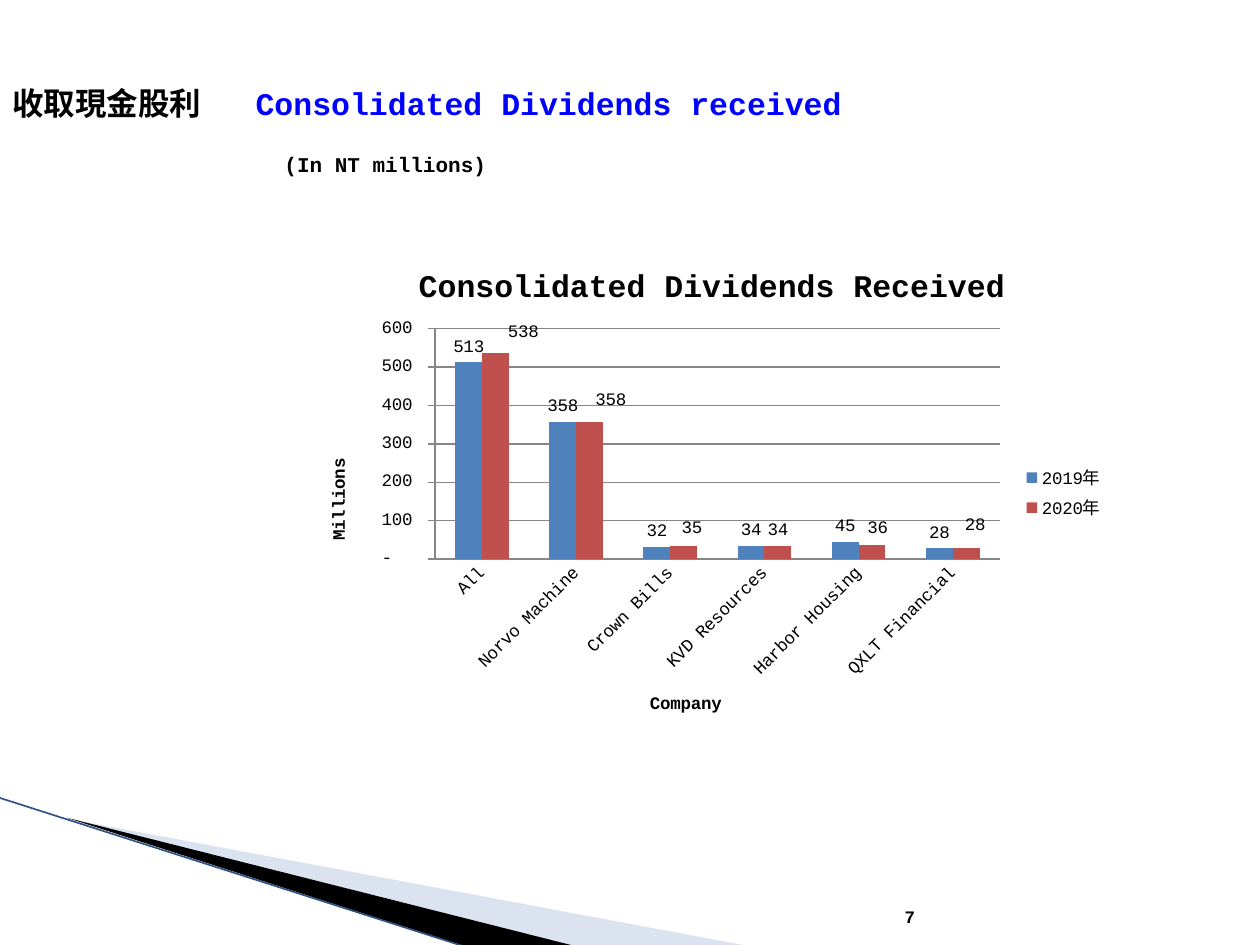
from lxml import etree
from pptx import Presentation
from pptx import util as u
from pptx.chart import data as chart_data
from pptx.dml import color
from pptx.enum import chart as chart_enum, shapes, text
from pptx.oxml import ns

FONT = "Courier New"
NUMBER_FORMAT = '_-* #,##0_-;\\-* #,##0_-;_-* "-"??_-;_-@_'
COMPANIES = ["All", "Norvo Machine", "Crown Bills", "KVD Resources",
             "Harbor Housing", "QXLT Financial"]
DIVIDENDS = {
    "2019年": ("4F81BD", [513, 358, 32, 34, 45, 28]),
    "2020年": ("C0504D", [538, 358, 35, 34, 36, 28]),
}
LABEL_SHIFTS = {0: (0.034, -0.01), 1: (0.026, -0.012), 2: (0.01, -0.004),
                4: (0.007, -0.004), 5: (0.011, -0.016)}


def rgb(value):
    """Turn a hex string into a colour."""
    return color.RGBColor.from_string(value)


def style_font(font, size, bold=False, hex_color="000000"):
    """Set the face, size, weight and colour of a font."""
    font.name = FONT
    font.size = u.Pt(size)
    font.bold = bold
    font.color.rgb = rgb(hex_color)


def add_text(slide, box, content, size, hex_color="000000", wrap=True,
             align=text.PP_ALIGN.LEFT, anchor=text.MSO_ANCHOR.MIDDLE):
    """Add a bold one-paragraph text box."""
    frame = slide.shapes.add_textbox(*map(u.Inches, box)).text_frame
    frame.word_wrap = wrap
    frame.vertical_anchor = anchor
    paragraph = frame.paragraphs[0]
    paragraph.text = content
    paragraph.alignment = align
    style_font(paragraph.font, size, True, hex_color)


def add_wedge(slide, points, hex_color, opacity=100):
    """Add a closed filled outline through points in inches."""
    start, *others = [(u.Inches(x), u.Inches(y)) for x, y in points]
    builder = slide.shapes.build_freeform(*start)
    builder.add_line_segments(others, close=True)
    shape = builder.convert_to_shape()
    shape.shadow.inherit = False
    shape.line.fill.background()
    shape.fill.solid()
    shape.fill.fore_color.rgb = rgb(hex_color)
    if opacity < 100:
        srgb = shape._element.spPr.find(".//" + ns.qn("a:srgbClr"))
        etree.SubElement(srgb, ns.qn("a:alpha"), val=str(opacity * 1000))


def add_line(slide, start, end, hex_color, width):
    """Add a straight line without a shadow."""
    line = slide.shapes.add_connector(
        shapes.MSO_CONNECTOR.STRAIGHT, *map(u.Inches, start + end))
    line.line.color.rgb = rgb(hex_color)
    line.line.width = u.Pt(width)
    etree.SubElement(line._element.spPr, ns.qn("a:effectLst"))


def place(element, index, **settings):
    """Give a chart element a manual layout, inserted at a child index."""
    for old in element.findall(ns.qn("c:layout")):
        element.remove(old)
    layout = etree.Element(ns.qn("c:layout"))
    manual = etree.SubElement(layout, ns.qn("c:manualLayout"))
    for name, value in settings.items():
        etree.SubElement(manual, ns.qn("c:" + name), val=str(value))
    element.insert(index, layout)


def style_title(title, content, size, x, y):
    """Write and place a bold chart or axis title."""
    run = title.text_frame.paragraphs[0].add_run()
    run.text = content
    style_font(run.font, size, True)
    place(title._element, 1, xMode="edge", yMode="edge", x=x, y=y)


def style_axis(axis, title, x, y):
    """Style an axis and its title."""
    style_font(axis.tick_labels.font, 10)
    axis.format.line.color.rgb = rgb("868686")
    axis.minor_tick_mark = chart_enum.XL_TICK_MARK.NONE
    style_title(axis.axis_title, title, 10, x, y)


def style_labels(labels):
    """Show values above the columns without leader lines."""
    labels.show_value = True
    labels.number_format = NUMBER_FORMAT
    labels.number_format_is_linked = False
    labels.position = chart_enum.XL_LABEL_POSITION.OUTSIDE_END
    style_font(labels.font, 10)
    tag = ns.qn("c:showLeaderLines")
    leader = labels._element.find(tag)
    if leader is None:
        leader = etree.SubElement(labels._element, tag)
    leader.set("val", "0")


def shift_labels(series, shifts):
    """Move single value labels by fractions of the chart size."""
    for index in shifts:
        label = series.points[index].data_label
        style_font(label.font, 10)
        label.position = chart_enum.XL_LABEL_POSITION.OUTSIDE_END
    for element in series._element.iter(ns.qn("c:dLbl")):
        index = int(element.find(ns.qn("c:idx")).get("val"))
        x, y = shifts[index]
        place(element, 1, x=x, y=y)
        number_format = etree.Element(
            ns.qn("c:numFmt"), formatCode=NUMBER_FORMAT, sourceLinked="0")
        element.insert(2, number_format)


def add_dividend_chart(slide, box):
    """Add the clustered column chart of dividends by company."""
    data = chart_data.CategoryChartData(number_format=NUMBER_FORMAT)
    data.categories = COMPANIES
    for name, (_, values) in DIVIDENDS.items():
        data.add_series(name, values)
    chart = slide.shapes.add_chart(
        chart_enum.XL_CHART_TYPE.COLUMN_CLUSTERED, *map(u.Inches, box), data).chart
    style_font(chart.font, 10)
    chart.has_title = True
    style_title(chart.chart_title, "Consolidated Dividends Received", 18, 0.136, 0.034)
    chart.chart_title.include_in_layout = False
    chart.has_legend = True
    chart.legend.position = chart_enum.XL_LEGEND_POSITION.RIGHT
    chart.legend.include_in_layout = False
    style_font(chart.legend.font, 10)

    style_axis(chart.category_axis, "Company", 0.423, 0.897)
    chart.category_axis.major_tick_mark = chart_enum.XL_TICK_MARK.NONE
    body = chart.category_axis._element.find(
        ns.qn("c:txPr") + "/" + ns.qn("a:bodyPr"))
    body.set("rot", "-2700000")
    body.set("vert", "horz")
    value_axis = chart.value_axis
    style_axis(value_axis, "Millions", 0.028, 0.425)
    value_axis.major_tick_mark = chart_enum.XL_TICK_MARK.CROSS
    value_axis.minimum_scale, value_axis.maximum_scale = 0, 600
    value_axis.major_unit = 100
    value_axis.tick_labels.number_format = NUMBER_FORMAT
    value_axis.tick_labels.number_format_is_linked = False
    value_axis.major_gridlines.format.line.color.rgb = rgb("868686")

    plot = chart.plots[0]
    plot.vary_by_categories = False
    plot.gap_width = 150
    plot.overlap = 0
    for series, (hex_color, _) in zip(plot.series, DIVIDENDS.values()):
        series.format.fill.solid()
        series.format.fill.fore_color.rgb = rgb(hex_color)
        style_labels(series.data_labels)
    shift_labels(plot.series[1], LABEL_SHIFTS)
    plot_area = chart._chartSpace.find(".//" + ns.qn("c:plotArea"))
    place(plot_area, 0, layoutTarget="inner", xMode="edge", yMode="edge",
          x=0.163, y=0.17, w=0.694, h=0.464)


def main():
    """Build and save the slide."""
    presentation = Presentation()
    presentation.slide_width = u.Inches(10)
    presentation.slide_height = u.Inches(7.5)
    slide = presentation.slides.add_slide(presentation.slide_layouts[6])
    add_wedge(slide, [(0.55, 6.5), (5.95, 7.51), (4.56, 7.51)], "A7B9DB", 40)
    add_wedge(slide, [(0.53, 6.49), (4.57, 7.51), (3.72, 7.52)], "000000")
    add_line(slide, (-0.01, 6.33), (3.71, 7.52), "2E5486", 0.95)
    add_text(slide, (4.79, 7.01, 2.57, 0.4), "7", 10,
             align=text.PP_ALIGN.RIGHT, anchor=text.MSO_ANCHOR.BOTTOM)
    add_text(slide, (1.93, 0.6, 7.01, 0.43), "Consolidated Dividends received",
             18, "0000FF")
    add_text(slide, (0, 0.62, 1.72, 0.4), "收取現金股利", 18, wrap=False)
    add_text(slide, (2.16, 1.15, 7.64, 0.3), "(In NT millions)", 12)
    add_dividend_chart(slide, (2.4, 1.94, 6.46, 3.94))
    presentation.save("out.pptx")


if __name__ == "__main__":
    main()
